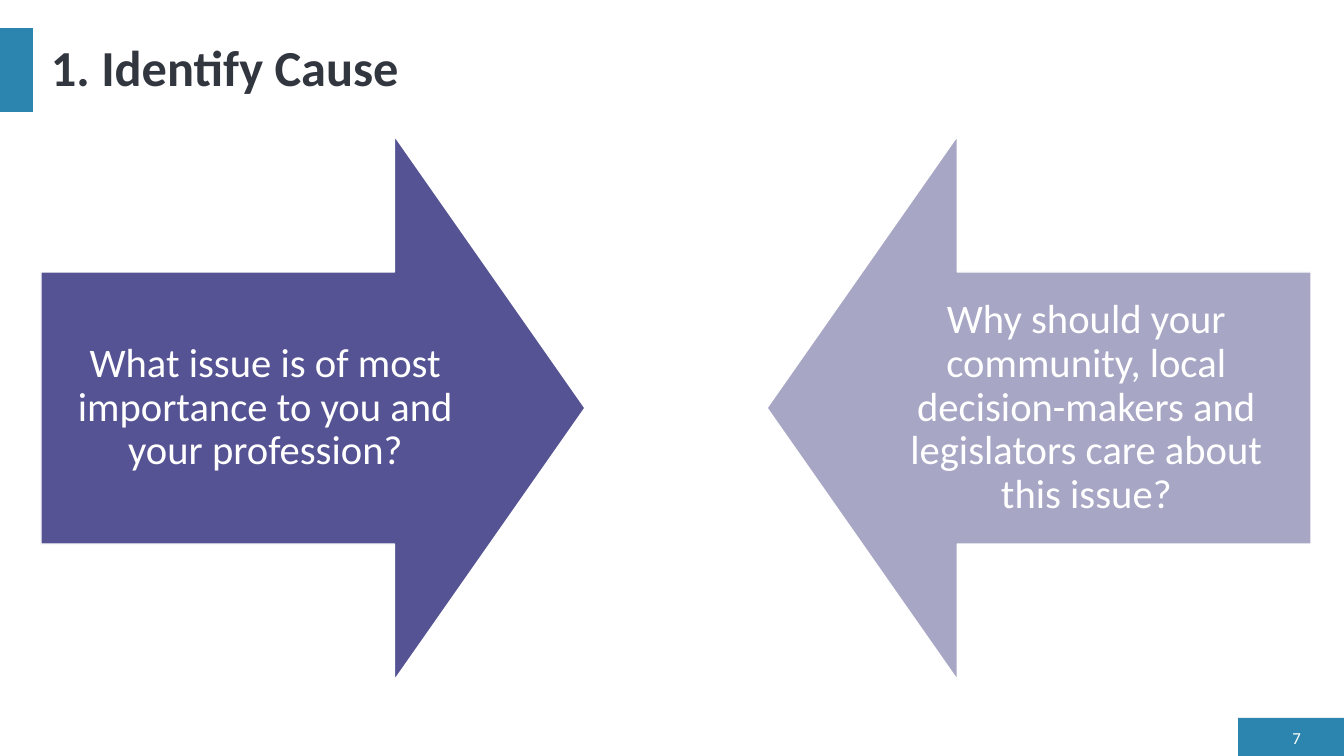
from pptx import Presentation
from pptx.dml.color import RGBColor
from pptx.enum.shapes import MSO_SHAPE
from pptx.enum.text import MSO_ANCHOR, PP_ALIGN
from pptx.util import Pt

W, H = 1344, 756
PX = 12192000 / W
TEAL = RGBColor(0x2C, 0x85, 0xAE)
DARK = RGBColor(0x32, 0x36, 0x3F)
PURPLE = RGBColor(0x55, 0x53, 0x93)
LILAC = RGBColor(0xA7, 0xA6, 0xC5)
WHITE = RGBColor(0xFF, 0xFF, 0xFF)

deck = Presentation()
deck.slide_width, deck.slide_height = round(W * PX), round(H * PX)
slide = deck.slides.add_slide(deck.slide_layouts[6])


def add_block(kind, box, fill):
    block = slide.shapes.add_shape(kind, *[round(n * PX) for n in box])
    block.shadow.inherit = False
    block.fill.solid()
    block.fill.fore_color.rgb = fill
    block.line.fill.background()
    return block


def add_text(text, box, size, color, align, inset, bold=False, space=0.9):
    frame = slide.shapes.add_textbox(*[round(n * PX) for n in box]).text_frame
    frame.word_wrap = True
    frame.vertical_anchor = MSO_ANCHOR.MIDDLE
    frame.margin_left = frame.margin_right = round(inset[0] * PX)
    frame.margin_top = frame.margin_bottom = round(inset[1] * PX)
    para = frame.paragraphs[0]
    para.text = text
    para.alignment = align
    para.line_spacing = space
    para.font.name = "Calibri"
    para.font.size = Pt(size)
    para.font.bold = bold
    para.font.color.rgb = color


# Teal accents: page number tab and title bar
for box in [(1238, 718, 106, 38), (0, 28, 33, 84)]:
    add_block(MSO_SHAPE.RECTANGLE, box, TEAL)

# Title
add_text("1. Identify Cause", (41, 28, 1270, 84), 36, DARK,
         PP_ALIGN.LEFT, (10, 5), bold=True)

# Two arrows that point at each other
SIDE, TOP = 544, 136
arrows = [
    (41, 41, 270, PURPLE,
     "What issue is of most importance to you and your profession?"),
    (767, 862, 90, LILAC,
     "Why should your community, local decision-makers and legislators "
     "care about this issue?"),
]
for left, inner, turn, fill, text in arrows:
    arrow = add_block(MSO_SHAPE.DOWN_ARROW, (left, TOP, SIDE, SIDE), fill)
    arrow.rotation = turn
    arrow.adjustments[0] = 0.5
    arrow.adjustments[1] = 0.35
    arrow.line.color.rgb = WHITE
    arrow.line.width = Pt(1)
    add_text(text, (inner, TOP + SIDE // 4, 449, SIDE // 2), 29, WHITE,
             PP_ALIGN.CENTER, (23, 23))

# Page number
add_text("7", (1270, 726, 41, 23), 12, WHITE, PP_ALIGN.RIGHT, (10, 5), space=1.0)

deck.save("out.pptx")
